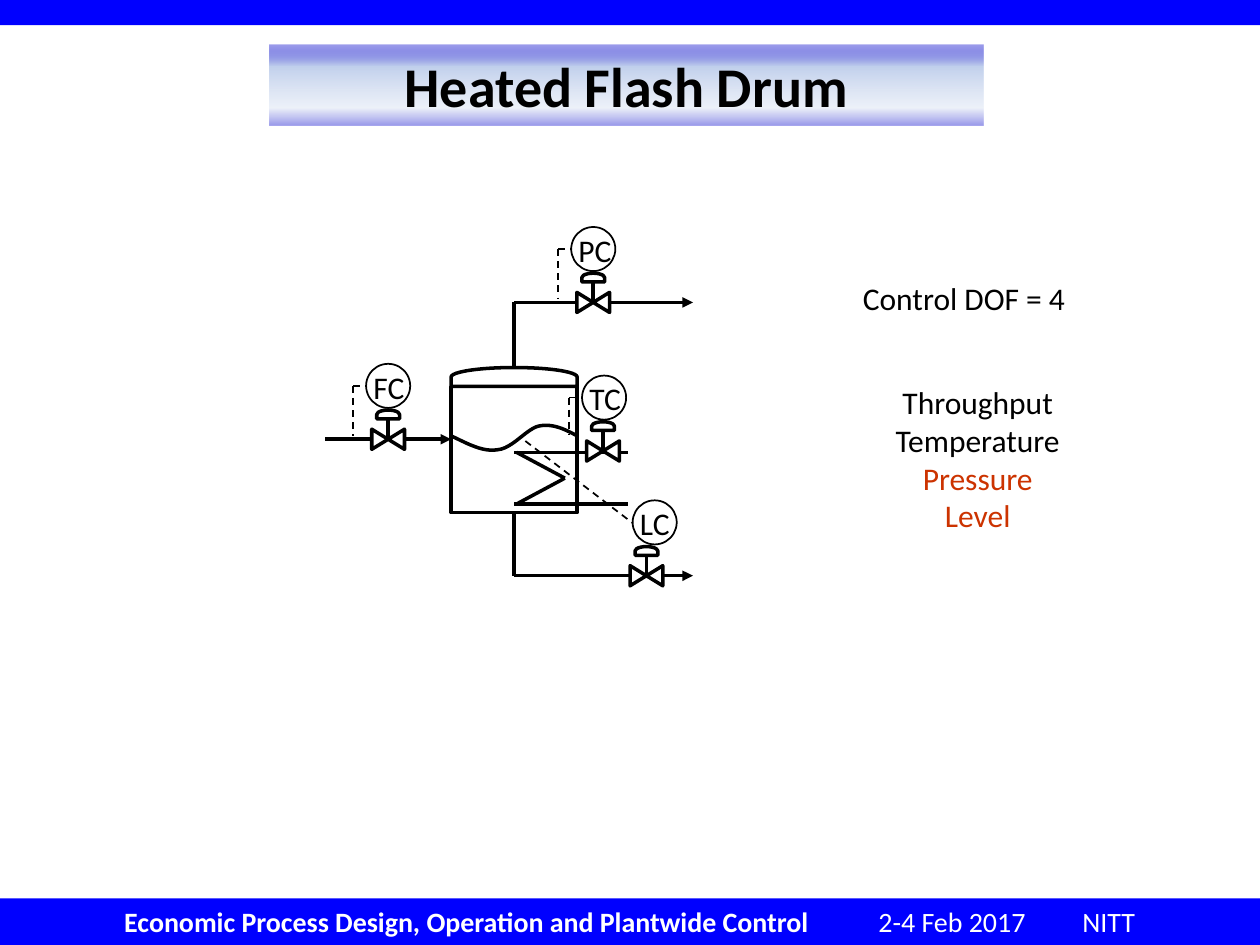
import pptx
import pptx.dml.color
import pptx.enum.dml
import pptx.enum.shapes
import pptx.enum.text
import pptx.oxml
import pptx.oxml.ns
import pptx.util

Pt = pptx.util.Pt
KIND = pptx.enum.shapes.MSO_SHAPE
ALIGN = pptx.enum.text.PP_ALIGN
ANCHOR = pptx.enum.text.MSO_ANCHOR
BLACK, WHITE, BLUE, RED = "000000", "FFFFFF", "0000FF", "CC3300"
NS = pptx.oxml.ns.nsdecls("a")


def color(code):
    return pptx.dml.color.RGBColor.from_string(code)


def xml(text):
    """Parse one a: element, adding its namespace."""
    head, rest = text.split(" ", 1)
    return pptx.oxml.parse_xml(f"{head} {NS} {rest}")


def write(frame, paras, size=18, bold=False, align=ALIGN.LEFT, anchor=ANCHOR.TOP):
    """Fill a frame; each paragraph is a list of (text, colour, bold) runs."""
    frame.vertical_anchor = anchor
    for i, runs in enumerate(paras):
        para = frame.paragraphs[0] if i == 0 else frame.add_paragraph()
        para.alignment = align
        for text, code, *own in runs:
            run = para.add_run()
            run.text = text
            font = run.font
            font.name, font.size = "Calibri", Pt(size)
            font.bold = own[0] if own else bold
            font.color.rgb = color(code)


def curve(start, parts, steps=12):
    """Sample points along a chain of cubic curves."""
    points = [start]
    for one, two, end in parts:
        for i in range(1, steps + 1):
            t = i / steps
            u = 1 - t
            points.append(tuple(
                u**3 * a + 3 * u * u * t * b + 3 * u * t * t * c + t**3 * d
                for a, b, c, d in zip(start, one, two, end)))
        start = end
    return points


class Sheet:
    def __init__(self, deck):
        self.slide = deck.slides.add_slide(deck.slide_layouts[5])
        self.shapes = self.slide.shapes
        self.thick, self.thin = 2, 1

    def title(self, text, x, y, w, h, stops):
        box = self.shapes.title
        box.left, box.top, box.width, box.height = Pt(x), Pt(y), Pt(w), Pt(h)
        marks = "".join(
            f'<a:gs pos="{pos * 1000}"><a:srgbClr val="{code}">'
            f'<a:alpha val="{alpha * 1000}"/></a:srgbClr></a:gs>'
            for pos, code, alpha in stops)
        box.element.spPr.append(xml(
            f'<a:gradFill rotWithShape="1"><a:gsLst>{marks}</a:gsLst>'
            '<a:lin ang="5400000" scaled="1"/></a:gradFill>'))
        write(box.text_frame, [[(text, BLACK)]], size=32, bold=True,
              align=ALIGN.CENTER, anchor=ANCHOR.MIDDLE)

    def style(self, shape, fill, width):
        shape.shadow.inherit = False
        if fill:
            shape.fill.solid()
            shape.fill.fore_color.rgb = color(fill)
        else:
            shape.fill.background()
        if width:
            shape.line.color.rgb = color(BLACK)
            shape.line.width = Pt(width)
        else:
            shape.line.fill.background()
        return shape

    def shape(self, kind, x, y, w, h, fill=None, width=0):
        item = self.shapes.add_shape(kind, Pt(x), Pt(y), Pt(w), Pt(h))
        return self.style(item, fill, width)

    def turned(self, kind, cx, cy, w, h, fill=None):
        """Add a shape about its centre, turned a quarter to the left."""
        item = self.shape(kind, cx - w / 2, cy - h / 2, w, h, fill, self.thick)
        item.rotation = 270

    def line(self, x1, y1, x2, y2, dash=False, arrow=False):
        item = self.shapes.add_connector(
            pptx.enum.shapes.MSO_CONNECTOR.STRAIGHT, Pt(x1), Pt(y1), Pt(x2), Pt(y2))
        item.line.color.rgb = color(BLACK)
        item.line.width = Pt(self.thin if dash else self.thick)
        if dash:
            item.line.dash_style = pptx.enum.dml.MSO_LINE.DASH
        if arrow:
            item.line._get_or_add_ln().append(xml('<a:tailEnd type="triangle"/>'))
        item.element.spPr.append(xml("<a:effectLst />"))

    def wave(self, points):
        spots = [(Pt(x), Pt(y)) for x, y in points]
        pen = self.shapes.build_freeform(*spots[0])
        pen.add_line_segments(spots[1:], close=False)
        self.style(pen.convert_to_shape(), None, self.thick)

    def label(self, x, y, w, h, paras, **form):
        box = self.shapes.add_textbox(Pt(x), Pt(y), Pt(w), Pt(h))
        box.text_frame.word_wrap = False
        write(box.text_frame, paras, **form)

    def valve(self, x, y):
        self.turned(KIND.FLOWCHART_COLLATE, x, y, 11.5, 18.7, WHITE)
        self.turned(KIND.FLOWCHART_DELAY, x, y - 14.2, 5, 13)
        self.line(x, y, x, y - 11.5)

    def control(self, name, x, y, drop):
        """Add a controller about its centre, with a sensing line of this drop."""
        size = 25.2
        left, top = x - size / 2, y - size / 2
        self.label(left - 2.9, top - 1.4, 36, 28.8, [[(name, BLACK)]])
        if drop:
            self.line(left - 7.4, y, left, y, dash=True)
            self.line(left - 7.4, y, left - 7.4, y + drop, dash=True)
        self.shape(KIND.OVAL, left, top, size, size, width=self.thin)

    def footer(self, y, w, h, inset, runs, tabs):
        bar = self.shape(KIND.RECTANGLE, 0, y, w, h, BLUE)
        frame = bar.text_frame
        frame.margin_left, frame.margin_right = Pt(inset), 0
        write(frame, [runs], size=16, anchor=ANCHOR.MIDDLE)
        stops = "".join(f'<a:tab pos="{Pt(tab)}" algn="l"/>' for tab in tabs)
        props = frame.paragraphs[0]._p.get_or_add_pPr()
        props.append(xml(f"<a:tabLst >{stops}</a:tabLst>"))


def main():
    deck = pptx.Presentation()
    deck.slide_width, deck.slide_height = Pt(720), Pt(540)
    sheet = Sheet(deck)
    sheet.shape(KIND.RECTANGLE, 0, 0, 720, 14.4, BLUE)
    sheet.footer(513.4, 720, 26.6, 71, [
        ("Economic Process Design, Operation and Plantwide Control", WHITE, True),
        ("\t2-4 Feb 2017\tNITT", WHITE)], tabs=(431, 547.5))
    sheet.title("Heated Flash Drum", 154, 25.6, 408, 46, [
        (1, "0000CC", 39), (27, "C2D1ED", 100), (78, "D2DDF1", 40), (100, "0000CC", 40)])

    # Drum, with its liquid level
    left, top, side = 257.8, 221, 72
    mid, base = left + side / 2, top + side
    sheet.shape(KIND.RECTANGLE, left, top, side, side, width=sheet.thick)
    sheet.turned(KIND.FLOWCHART_DELAY, mid, top - 5.6, 10.8, side)
    sheet.wave(curve((left, 249.1), [
        ((267.1, 253.4), (275.8, 258.5), (284.4, 257)),
        ((293, 256.3), (301, 244.8), (308.2, 243.4)),
        ((316.1, 241.9), (323.3, 245.5), (left + side, 249.1))]))

    # Feed, vapour and liquid pipes
    feed, vapour, liquid, end = 251, 172.8, 329, 396
    sheet.line(185.8, feed, left, feed, arrow=True)
    for start, pipe in ((top - 12, vapour), (base, liquid)):
        sheet.line(mid, start, mid, pipe)
        sheet.line(mid, pipe, end, pipe, arrow=True)

    # Heating coil
    steam, drain = 258.5, 288
    for pipe in (steam, drain):
        sheet.line(mid, pipe, 358.6, pipe)
        sheet.line(mid + 1.4, pipe, mid + 29, (steam + drain) / 2)

    # Controller name, valve centre, controller shift, sensing line drop
    for name, x, y, shift, drop in (
            ("FC", 221.8, feed, 0, 28.8), ("PC", 339, vapour, 0, 28.8),
            ("LC", 369.4, liquid, 4.7, 0), ("TC", 344.6, steam - 0.8, 0.6, 21.6)):
        sheet.valve(x, y)
        sheet.control(name, x + shift, y - 30.5, drop)
    sheet.line(300.2, 252, 361.4, 298.8, dash=True)

    sheet.label(486, 156.2, 131.8, 28.8, [[("Control DOF = 4", BLACK)]])
    sheet.label(504, 215.3, 109.4, 94.3, [
        [("Throughput", BLACK)], [("Temperature", BLACK)],
        [("Pressure", RED)], [("Level", RED)]], align=ALIGN.CENTER)
    deck.save("out.pptx")


if __name__ == "__main__":
    main()
